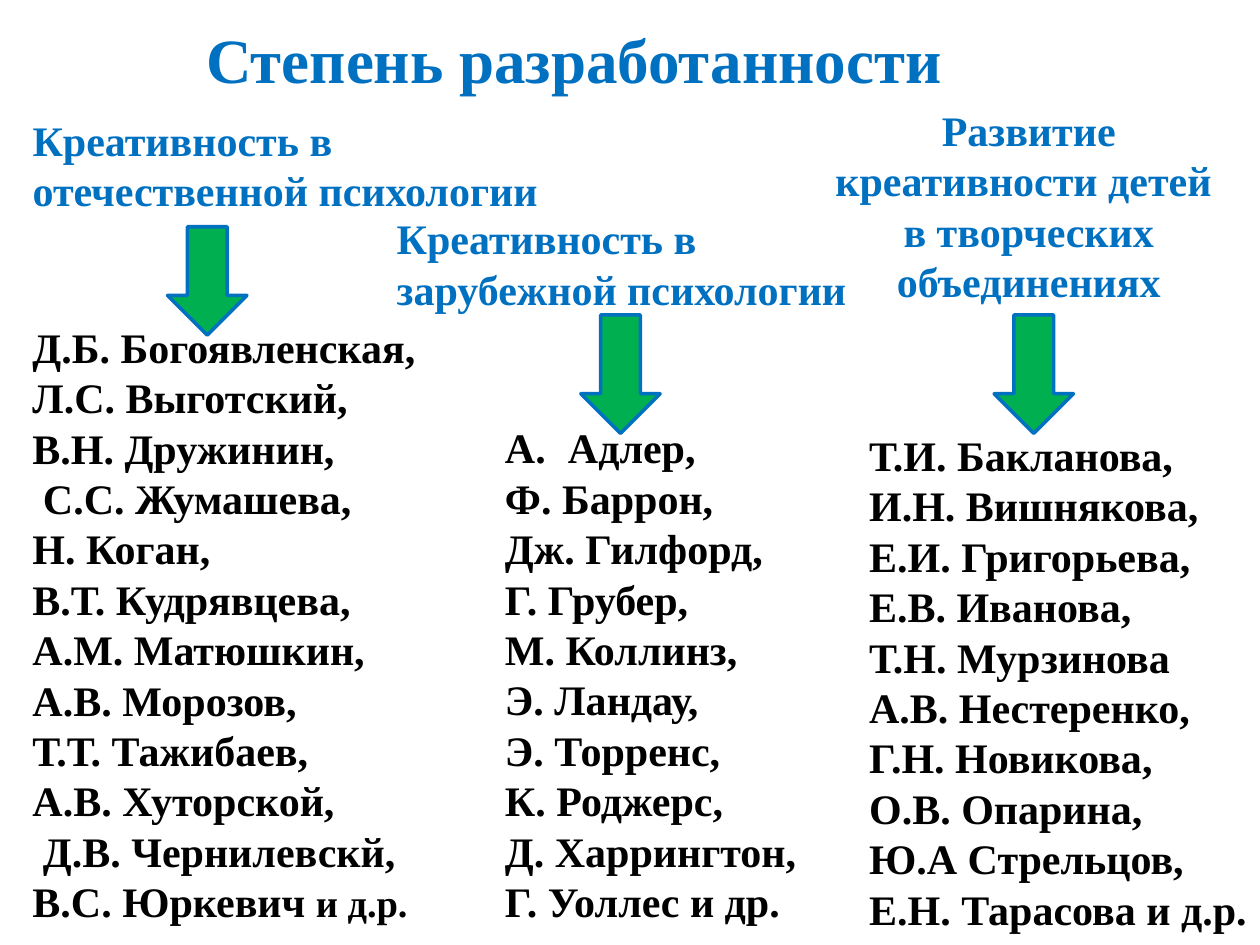
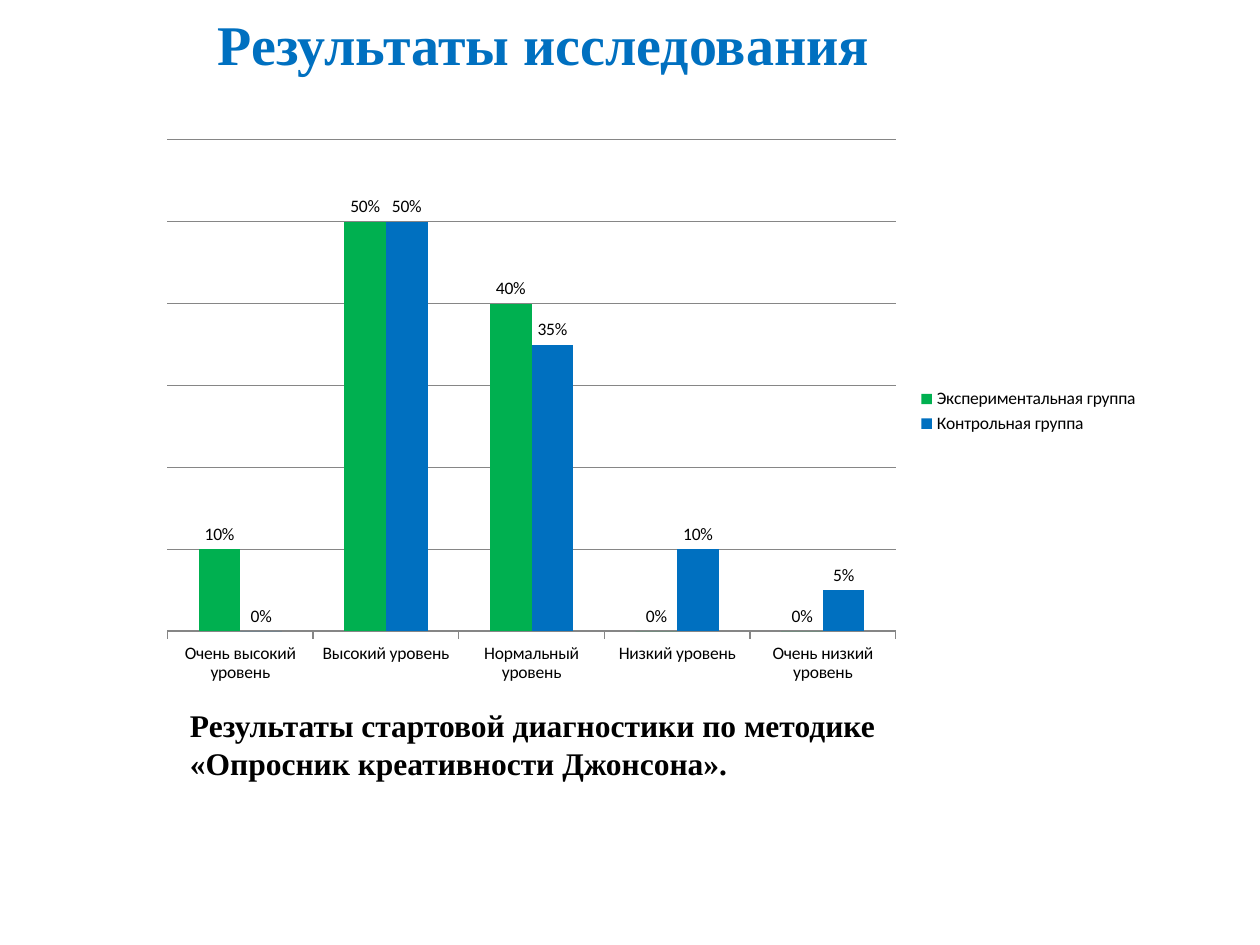
from lxml.etree import SubElement
from pptx import Presentation
from pptx.chart.data import CategoryChartData
from pptx.dml.color import RGBColor
from pptx.enum.chart import XL_CHART_TYPE as ChartType, XL_LABEL_POSITION as LabelPosition
from pptx.enum.chart import XL_LEGEND_POSITION as LegendPosition, XL_TICK_MARK as TickMark
from pptx.enum.shapes import MSO_SHAPE as Shape
from pptx.enum.text import MSO_ANCHOR as Anchor, MSO_AUTO_SIZE as AutoSize, PP_ALIGN as Align
from pptx.oxml.ns import qn
from pptx.util import Inches, Pt

COLORS = {"blue": "0070C0", "green": "00B050", "black": "000000", "grid": "868686"}
TEXT_FONT = "Times New Roman"
CHART_FONT = "Calibri"
TITLE_LAYOUT, LIST_LAYOUT = 5, 1

DOMESTIC_AUTHORS = [
    "Д.Б. Богоявленская,", "Л.С. Выготский,", "В.Н. Дружинин,", " С.С. Жумашева,",
    "Н. Коган,", "В.Т. Кудрявцева,", "А.М. Матюшкин,", "А.В. Морозов,", "Т.Т. Тажибаев,",
    "А.В. Хуторской,", " Д.В. Чернилевскй,", "В.С. Юркевич ",
]
FOREIGN_AUTHORS = [
    "Адлер,", "Ф. Баррон,", "Дж. Гилфорд,", "Г. Грубер,", "М. Коллинз,",
    "Э. Ландау,", "Э. Торренс,", "К. Роджерс,", "Д. Харрингтон,", "Г. Уоллес и др.",
]
CHILDREN_AUTHORS = [
    "Т.И. Бакланова,", "И.Н. Вишнякова,", "Е.И. Григорьева,", "Е.В. Иванова,",
    "Т.Н. Мурзинова", "А.В. Нестеренко,", "Г.Н. Новикова,", "О.В. Опарина,",
    "Ю.А Стрельцов,", "Е.Н. Тарасова и д.р.",
]
LEVELS = ["Очень высокий уровень", "Высокий уровень", "Нормальный уровень",
          "Низкий уровень", "Очень низкий уровень"]
GROUPS = [
    ("Экспериментальная группа", (0.1, 0.5, 0.4, 0, 0), "green"),
    ("Контрольная группа", (0, 0.5, 0.35, 0.1, 0.05), "blue"),
]


def rgb(name):
    return RGBColor.from_string(COLORS[name])


def apply(target, formats):
    for name, value in formats.items():
        setattr(target, name, value)


def place(shape, box):
    apply(shape, dict(zip(("left", "top", "width", "height"), map(Inches, box))))


class Deck:
    """Holds the shared style and the slide being built."""

    def __init__(self):
        self.presentation = Presentation()
        apply(self.presentation, {"slide_width": Inches(10), "slide_height": Inches(7.5)})
        self.slide = None

    def start_slide(self, layout, title, box, size):
        self.slide = self.presentation.slides.add_slide(self.presentation.slide_layouts[layout])
        place(self.slide.shapes.title, box)
        self.fill_lines(self.slide.shapes.title, [title], "blue", size, alignment=Align.CENTER)

    def add_run(self, paragraph, text, color, size):
        run = paragraph.add_run()
        run.text = text
        apply(run.font, {"name": TEXT_FONT, "size": Pt(size), "bold": True})
        run.font.color.rgb = rgb(color)

    def fill_lines(self, shape, lines, color, size, **paragraph_format):
        frame = shape.text_frame
        for index, line in enumerate(lines):
            paragraph = frame.add_paragraph() if index else frame.paragraphs[0]
            apply(paragraph, paragraph_format)
            self.add_run(paragraph, line, color, size)
        return frame.paragraphs

    def add_text(self, box, lines, color="black", size=24, anchor=Anchor.TOP, **paragraph_format):
        shape = self.slide.shapes.add_textbox(*map(Inches, box))
        apply(shape.text_frame, {"word_wrap": True, "vertical_anchor": anchor,
                                 "auto_size": AutoSize.SHAPE_TO_FIT_TEXT})
        return self.fill_lines(shape, lines, color, size, **paragraph_format)

    def add_heading(self, left, top, text):
        self.add_text((left, top, 4.38, 0.91), [text], "blue", space_before=Pt(6))

    def fill_body(self, box, lines):
        body = self.slide.placeholders[1]
        place(body, box)
        body.text_frame.auto_size = AutoSize.SHAPE_TO_FIT_TEXT
        paragraphs = self.fill_lines(body, lines, "blue", 24,
                                     alignment=Align.CENTER, space_before=Pt(0))
        for paragraph in paragraphs:
            self.set_bullet(paragraph, 0, "buNone")

    def set_bullet(self, paragraph, indent, tag, **attributes):
        properties = paragraph._p.get_or_add_pPr()
        properties.set("marL", str(Inches(indent)))
        properties.set("indent", str(-Inches(indent)))
        SubElement(properties, qn("a:" + tag), attributes)

    def add_down_arrow(self, left, top, height):
        arrow = self.slide.shapes.add_shape(Shape.DOWN_ARROW, *map(Inches, (left, top, 0.63, height)))
        arrow.shadow.inherit = False
        arrow.fill.solid()
        arrow.fill.fore_color.rgb = rgb("green")
        arrow.line.color.rgb = rgb("blue")
        arrow.line.width = Pt(2)

    def add_column_chart(self, box, categories, groups):
        data = CategoryChartData(number_format="0%")
        data.categories = categories
        for name, values, _ in groups:
            data.add_series(name, values)
        chart = self.slide.shapes.add_chart(
            ChartType.COLUMN_CLUSTERED, *map(Inches, box), data).chart
        apply(chart, {"has_title": False, "has_legend": True})
        apply(chart.legend, {"position": LegendPosition.RIGHT, "include_in_layout": False})
        apply(chart.font, {"name": CHART_FONT, "size": Pt(10)})
        chart.font.color.rgb = rgb("black")

        value_axis, category_axis = chart.value_axis, chart.category_axis
        apply(value_axis, {"visible": False, "has_major_gridlines": True, "minimum_scale": 0,
                           "maximum_scale": 0.6, "major_unit": 0.1})
        category_axis.major_tick_mark = TickMark.OUTSIDE
        for line in (value_axis.major_gridlines.format.line, category_axis.format.line):
            line.color.rgb = rgb("grid")
            line.width = Pt(0.75)

        plot = chart.plots[0]
        apply(plot, {"gap_width": 150, "overlap": 0, "vary_by_categories": False})
        for series, (_, _, color) in zip(plot.series, groups):
            series.format.fill.solid()
            series.format.fill.fore_color.rgb = rgb(color)
            apply(series.data_labels, {"show_value": True, "number_format": "0%",
                                       "number_format_is_linked": False,
                                       "position": LabelPosition.OUTSIDE_END})


def build_research_slide(deck):
    deck.start_slide(LIST_LAYOUT, "Степень разработанности", (0.47, 0.16, 8.17, 0.61), 36)
    deck.fill_body((6.33, 0.78, 3.67, 1.72),
                   ["Развитие креативности детей ", "в творческих объединениях"])
    deck.add_heading(0.16, 0.86, "Креативность в отечественной психологии")
    deck.add_heading(3.05, 1.64, "Креативность в зарубежной психологии")

    domestic = deck.add_text((0.16, 2.5, 5, 4.95), DOMESTIC_AUTHORS)
    deck.add_run(domestic[-1], "и д.р.", "black", 22)
    foreign = deck.add_text((3.91, 3.3, 5, 4.13), FOREIGN_AUTHORS)
    deck.set_bullet(foreign[0], 0.5, "buAutoNum", type="alphaUcPeriod")
    deck.add_text((6.8, 3.36, 5, 4.13), CHILDREN_AUTHORS)

    for left, top, height in ((1.33, 1.8, 0.86), (4.61, 2.5, 0.94), (7.89, 2.5, 0.94)):
        deck.add_down_arrow(left, top, height)


def build_results_slide(deck):
    deck.start_slide(TITLE_LAYOUT, "Результаты исследования", (0.23, 0, 8.17, 0.69), 32)
    deck.add_column_chart((1.17, 1.02, 7.97, 4.49), LEVELS, GROUPS)
    deck.add_text((1.41, 5.55, 5.94, 0.71),
                  ["Результаты стартовой диагностики по методике «Опросник креативности Джонсона»."],
                  size=18, anchor=Anchor.MIDDLE)


def main():
    deck = Deck()
    build_research_slide(deck)
    build_results_slide(deck)
    deck.presentation.save("out.pptx")


if __name__ == "__main__":
    main()
